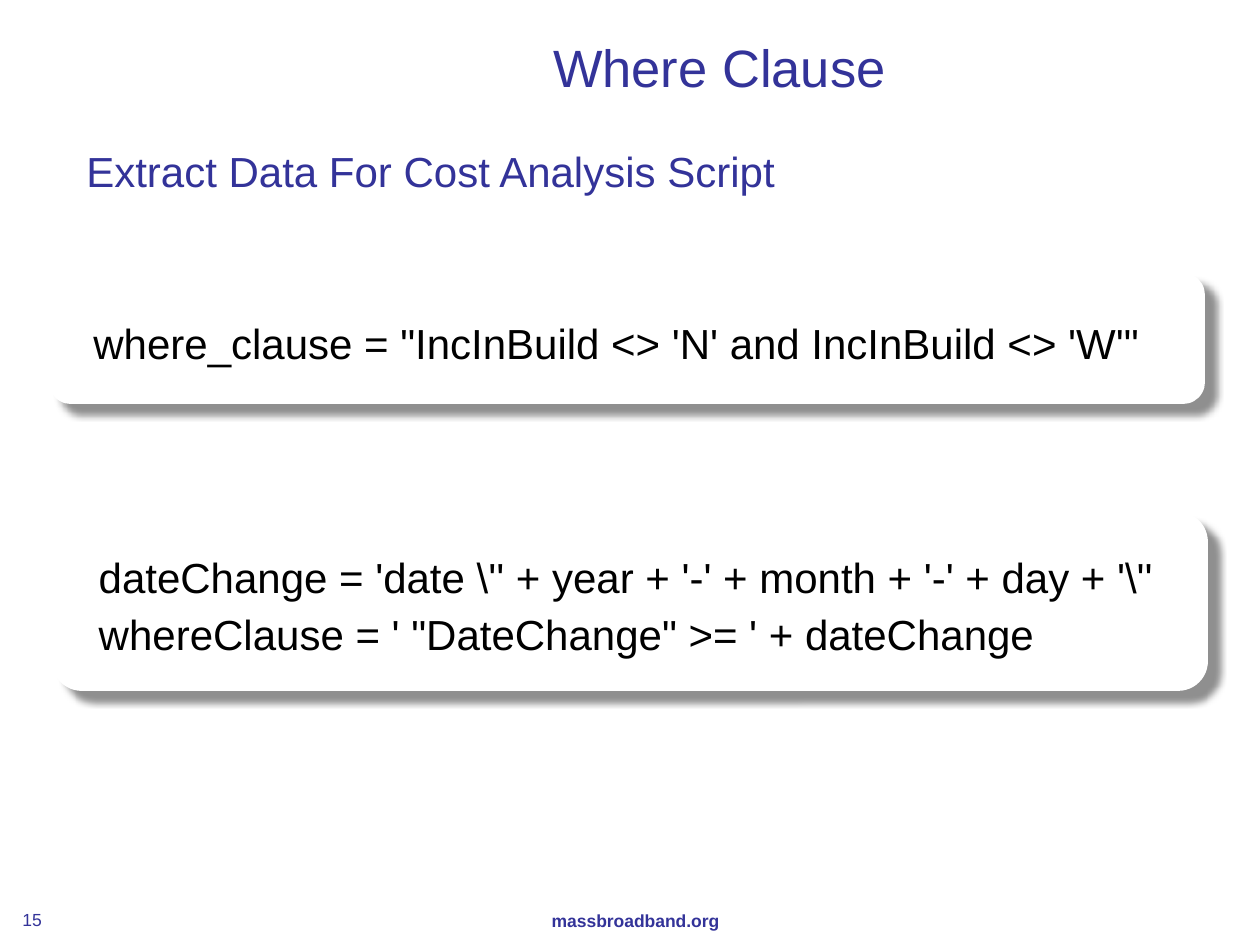
from lxml import etree
from pptx import Presentation
from pptx.dml.color import RGBColor
from pptx.enum.shapes import MSO_SHAPE
from pptx.enum.text import MSO_ANCHOR, PP_ALIGN
from pptx.oxml.ns import qn
from pptx.util import Emu, Pt

PX = 914400 / 126
COLORS = {"heading": "333399", "code": "000000", "panel": "FFFFFF", "shadow": "000000"}


def px(length):
    return Emu(round(length * PX))


class SlideBuilder:
    font_name = "Arial"

    def __init__(self, presentation):
        self.slide = presentation.slides.add_slide(presentation.slide_layouts[6])
        background = self.slide.background.fill
        background.solid()
        background.fore_color.rgb = RGBColor.from_string(COLORS["panel"])

    def format_text(self, frame, text, size, color, align, line_spacing=None, bold=False):
        frame.text = text
        for paragraph in frame.paragraphs:
            paragraph.alignment = align
            if line_spacing:
                paragraph.line_spacing = line_spacing
            for run in paragraph.runs:
                run.font.name = self.font_name
                run.font.size = Pt(size)
                run.font.bold = bold
                run.font.color.rgb = RGBColor.from_string(COLORS[color])

    def text(self, box, text, size, align=PP_ALIGN.LEFT, anchor=MSO_ANCHOR.TOP,
             wrap=True, bold=False):
        shape = self.slide.shapes.add_textbox(*map(px, box))
        frame = shape.text_frame
        frame.word_wrap = wrap
        frame.vertical_anchor = anchor
        self.format_text(frame, text, size, "heading", align, bold=bold)

    def code_panel(self, box, lines):
        shape = self.slide.shapes.add_shape(MSO_SHAPE.ROUNDED_RECTANGLE, *map(px, box))
        shape.fill.solid()
        shape.fill.fore_color.rgb = RGBColor.from_string(COLORS["panel"])
        shape.line.fill.background()
        self.add_shadow(shape)
        frame = shape.text_frame
        frame.word_wrap = True
        frame.vertical_anchor = MSO_ANCHOR.MIDDLE
        frame.margin_left = frame.margin_right = px(38)
        self.format_text(frame, "\n".join(lines), 24, "code", PP_ALIGN.LEFT, line_spacing=1.15)

    def add_shadow(self, shape):
        shape.shadow.inherit = False
        effects = shape._element.spPr.find(qn("a:effectLst"))
        shadow = etree.SubElement(effects, qn("a:outerShdw"), blurRad=str(Pt(4)),
                                  dist=str(Pt(9)), dir=str(44 * 60000),
                                  algn="tl", rotWithShape="0")
        color = etree.SubElement(shadow, qn("a:srgbClr"), val=COLORS["shadow"])
        etree.SubElement(color, qn("a:alpha"), val="43000")


def main():
    presentation = Presentation()
    presentation.slide_width, presentation.slide_height = px(1260), px(945)
    builder = SlideBuilder(presentation)

    # Headings
    builder.text((189, 6, 1061, 120), "Where Clause", 30, PP_ALIGN.CENTER, MSO_ANCHOR.MIDDLE)
    builder.text((74, 139, 721, 63), "Extract Data For Cost Analysis Script", 24, wrap=False)

    # Code panels
    builder.code_panel((49, 273, 1156, 131), [
        """where_clause = "IncInBuild <> 'N' and IncInBuild <> 'W'\"""",
    ])
    builder.code_panel((52, 512, 1156, 179), [
        r"dateChange = 'date \'' + year + '-' + month + '-' + day + '\''",
        """whereClause = ' "DateChange" >= ' + dateChange""",
    ])

    # Footer
    builder.text((10, 892, 53, 44), "15", 10, anchor=MSO_ANCHOR.BOTTOM)
    builder.text((420, 872, 431, 65), "massbroadband.org", 10, PP_ALIGN.CENTER,
                 MSO_ANCHOR.BOTTOM, bold=True)

    presentation.save("out.pptx")


if __name__ == "__main__":
    main()
